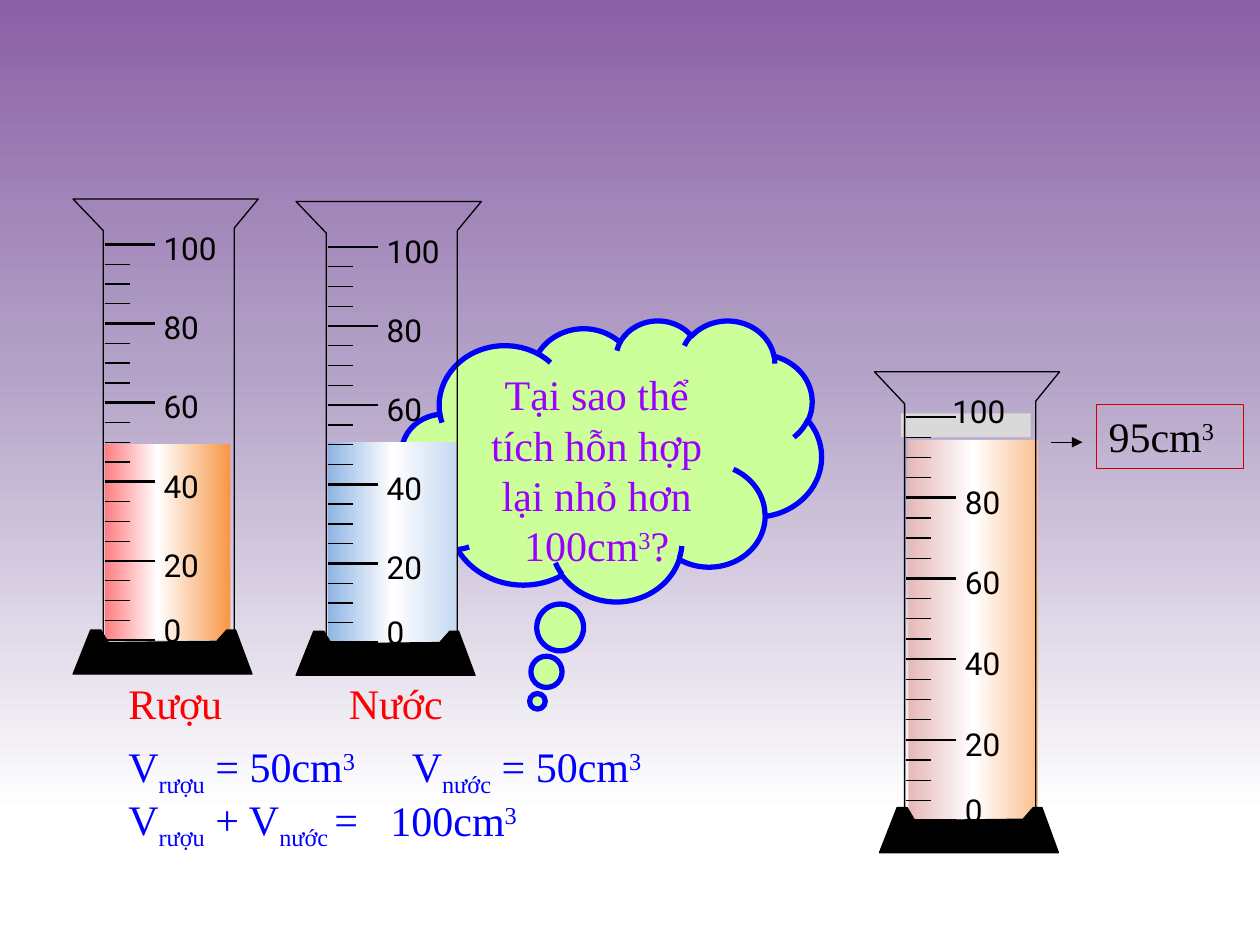
"""Build the slide asking why 50 cm³ of alcohol and 50 cm³ of water mix to less than 100 cm³."""
from dataclasses import dataclass

from lxml import etree
from pptx import Presentation
from pptx.dml.color import RGBColor
from pptx.enum.shapes import MSO_CONNECTOR, MSO_SHAPE
from pptx.enum.text import MSO_ANCHOR, PP_ALIGN
from pptx.oxml.ns import qn
from pptx.util import Inches, Pt

STRAIGHT = MSO_CONNECTOR.STRAIGHT
RECTANGLE = MSO_SHAPE.RECTANGLE
CLOUD = MSO_SHAPE.CLOUD_CALLOUT
TOP = MSO_ANCHOR.TOP
LEFT, CENTER = PP_ALIGN.LEFT, PP_ALIGN.CENTER

BLACK = RGBColor(0x00, 0x00, 0x00)
RED = RGBColor(0xFF, 0x00, 0x00)
BLUE = RGBColor(0x00, 0x00, 0xFF)
VIOLET = RGBColor(0x99, 0x00, 0xFF)
LIME = RGBColor(0xCC, 0xFF, 0x99)
GREY = RGBColor(0xD9, 0xD9, 0xD9)
DARK_RED = RGBColor(0xCC, 0x00, 0x00)
WHITE = RGBColor(0xFF, 0xFF, 0xFF)
PURPLE = RGBColor(0x8B, 0x60, 0xA6)
LILAC = RGBColor(0xB3, 0xA2, 0xC7)
CORAL = RGBColor(0xFF, 0x7C, 0x80)
ORANGE = RGBColor(0xF7, 0x96, 0x46)
SKY = RGBColor(0x8E, 0xB4, 0xE3)
PALE_BLUE = RGBColor(0xC6, 0xD9, 0xF1)
ROSE = RGBColor(0xE6, 0xB9, 0xB8)
PEACH = RGBColor(0xFA, 0xC0, 0x90)

SERIF, SANS = "Times New Roman", "Roboto"
SUB, SUPER = -25000, 30000
CUBED = ("3", SUPER)

Box = tuple[float, float, float, float]
Runs = list[tuple[str, int]]
Stops = list[tuple[int, RGBColor]]

GLASS = [(0, 0), (0.24, 0.25), (0.24, 3.53), (1.28, 3.54), (1.28, 0.23), (1.47, 0)]
FOOT = [(0, 0.35), (0.14, 0), (0.22, 0), (0.28, 0.1), (1.14, 0.09), (1.22, 0),
        (1.29, 0), (1.42, 0.35)]


@dataclass
class Label:
    box: Box
    runs: Runs
    color: RGBColor


@dataclass
class Cylinder:
    left: float
    top: float
    foot_left: float
    foot_top: float
    liquid: Box
    stops: Stops
    angle: int = 0
    rotation: int = 0
    stretch: float = 1.0
    top_label_shift: tuple[float, float] = (0, 0)


LABELS = [
    Label((0.92, 5.33, 1.42, 0.5), [("Rượu", 0)], RED),
    Label((2.67, 5.33, 1.42, 0.5), [("Nước", 0)], RED),
    Label((0.92, 5.83, 2.67, 0.5), [("V", 0), ("rượu", SUB), (" = 50cm", 0), CUBED], BLUE),
    Label((3.17, 5.83, 2.67, 0.5), [("V", 0), ("nước", SUB), (" = 50cm", 0), CUBED], BLUE),
    Label((0.92, 6.25, 2.92, 0.5),
          [("V", 0), ("rượu", SUB), (" + V", 0), ("nước ", SUB), ("=", 0)], BLUE),
    Label((3, 6.26, 2.25, 0.5), [("100cm", 0), CUBED], BLUE),
]
CYLINDERS = [
    Cylinder(0.58, 1.58, 0.58, 5, (0.55, 3.8, 1.56, 1),
             [(0, CORAL), (42, WHITE), (100, ORANGE)], angle=270, rotation=270),
    Cylinder(2.35, 1.6, 2.35, 5.01, (2.6, 3.51, 1.03, 1.65),
             [(0, SKY), (50, WHITE), (100, PALE_BLUE)]),
    Cylinder(6.94, 2.95, 6.98, 6.41, (7.21, 3.49, 1.03, 3.08),
             [(0, ROSE), (50, WHITE), (100, PEACH)],
             stretch=1.02, top_label_shift=(-0.1, -0.08)),
]


def fill_gradient(fill, element, stops: Stops, angle: int) -> None:
    fill.gradient()
    fill.gradient_angle = angle
    stop_list = element.find(".//" + qn("a:gsLst"))
    for stop in list(stop_list):
        stop_list.remove(stop)
    for position, color in stops:
        stop = etree.SubElement(stop_list, qn("a:gs"), pos=str(position * 1000))
        etree.SubElement(stop, qn("a:srgbClr"), val=str(color))


def write_text(shape, runs: Runs, color: RGBColor, font: str = SERIF, size: int = 24,
               alignment=LEFT) -> None:
    frame = shape.text_frame
    frame.word_wrap = True
    frame.vertical_anchor = TOP
    paragraph = frame.paragraphs[0]
    paragraph.alignment = alignment
    paragraph.font.name = font
    paragraph.font.size = Pt(size)
    paragraph.font.color.rgb = color
    for text, baseline in runs:
        run = paragraph.add_run()
        run.text = text
        if baseline:
            run._r.get_or_add_rPr().set("baseline", str(baseline))


def style_shape(shape, fill: RGBColor | None, line: RGBColor | None, width: float = 0.75) -> None:
    shape.shadow.inherit = False
    if fill is None:
        shape.fill.background()
    else:
        shape.fill.solid()
        shape.fill.fore_color.rgb = fill
    if line is None:
        shape.line.fill.background()
    else:
        shape.line.color.rgb = line
        shape.line.width = Pt(width)


def add_shape(shapes, kind, box: Box, fill: RGBColor | None, line: RGBColor | None,
              width: float = 0.75):
    shape = shapes.add_shape(kind, *map(Inches, box))
    style_shape(shape, fill, line, width)
    return shape


def add_label(shapes, label: Label, font: str = SERIF, size: int = 24) -> None:
    box = shapes.add_textbox(*map(Inches, label.box))
    write_text(box, label.runs, label.color, font, size)


def add_line(shapes, left: float, top: float, length: float, width: float = 0.75):
    line = shapes.add_connector(STRAIGHT, Inches(left), Inches(top),
                                Inches(left + length), Inches(top))
    line.line.color.rgb = BLACK
    line.line.width = Pt(width)
    etree.SubElement(line.line._get_or_add_ln().getparent(), qn("a:effectLst"))
    return line


def add_outline(shapes, left: float, top: float, points: list, stretch: float,
                fill: RGBColor | None) -> None:
    corners = [(Inches(left + x), Inches(top + y * stretch)) for x, y in points]
    builder = shapes.build_freeform(*corners[0])
    builder.add_line_segments(corners[1:], close=True)
    style_shape(builder.convert_to_shape(), fill, BLACK)


def add_cylinder(slide, cylinder: Cylinder) -> None:
    shapes = slide.shapes.add_group_shape().shapes
    liquid = add_shape(shapes, RECTANGLE, cylinder.liquid, None, None)
    liquid.rotation = cylinder.rotation
    fill_gradient(liquid.fill, liquid.element, cylinder.stops, cylinder.angle)
    add_outline(shapes, cylinder.left, cylinder.top, GLASS, cylinder.stretch, None)
    tick_tops = [cylinder.top + 0.36 + 0.157 * cylinder.stretch * i for i in range(21)]
    for index, tick_top in enumerate(tick_tops):
        major = index % 4 == 0
        add_line(shapes, cylinder.left + 0.25, tick_top, 0.4 if major else 0.2,
                 1.5 if major else 0.75)
    for index, tick_top in enumerate(tick_tops[::4]):
        value = 100 - 20 * index
        shift_x, shift_y = cylinder.top_label_shift if value == 100 else (0, 0)
        rise = 0.28 if value == 0 else 0.17
        box = (cylinder.left + 0.62 + shift_x, tick_top - rise + shift_y, 0.8, 0.4)
        add_label(shapes, Label(box, [(str(value), 0)], BLACK), SANS, 18)
    add_outline(shapes, cylinder.foot_left, cylinder.foot_top, FOOT, cylinder.stretch, BLACK)


def main() -> None:
    presentation = Presentation()
    presentation.slide_width, presentation.slide_height = Inches(10), Inches(7.5)
    slide = presentation.slides.add_slide(presentation.slide_layouts[6])
    fill_gradient(slide.background.fill, slide.element,
                  [(0, PURPLE), (39, LILAC), (86, WHITE)], 270)
    add_shape(slide.shapes, RECTANGLE, (7.15, 3.28, 1.03, 0.19), GREY, None)
    for label in LABELS:
        add_label(slide.shapes, label)
    cloud = add_shape(slide.shapes, CLOUD, (3.19, 2.54, 3.33, 2.23), LIME, BLUE, 3)
    cloud.adjustments[0], cloud.adjustments[1] = -0.177, 0.857
    question = [("Tại sao thể tích hỗn hợp lại nhỏ hơn 100cm", 0), CUBED, ("?", 0)]
    write_text(cloud, question, VIOLET, alignment=CENTER)
    for cylinder in CYLINDERS:
        add_cylinder(slide, cylinder)
    reading = add_shape(slide.shapes, RECTANGLE, (8.7, 3.21, 1.17, 0.51), None, DARK_RED)
    write_text(reading, [("95cm", 0), CUBED], BLACK)
    arrow = add_line(slide.shapes, 8.34, 3.51, 0.25)
    etree.SubElement(arrow.line._get_or_add_ln(), qn("a:tailEnd"), type="triangle")
    presentation.save("out.pptx")


if __name__ == "__main__":
    main()
